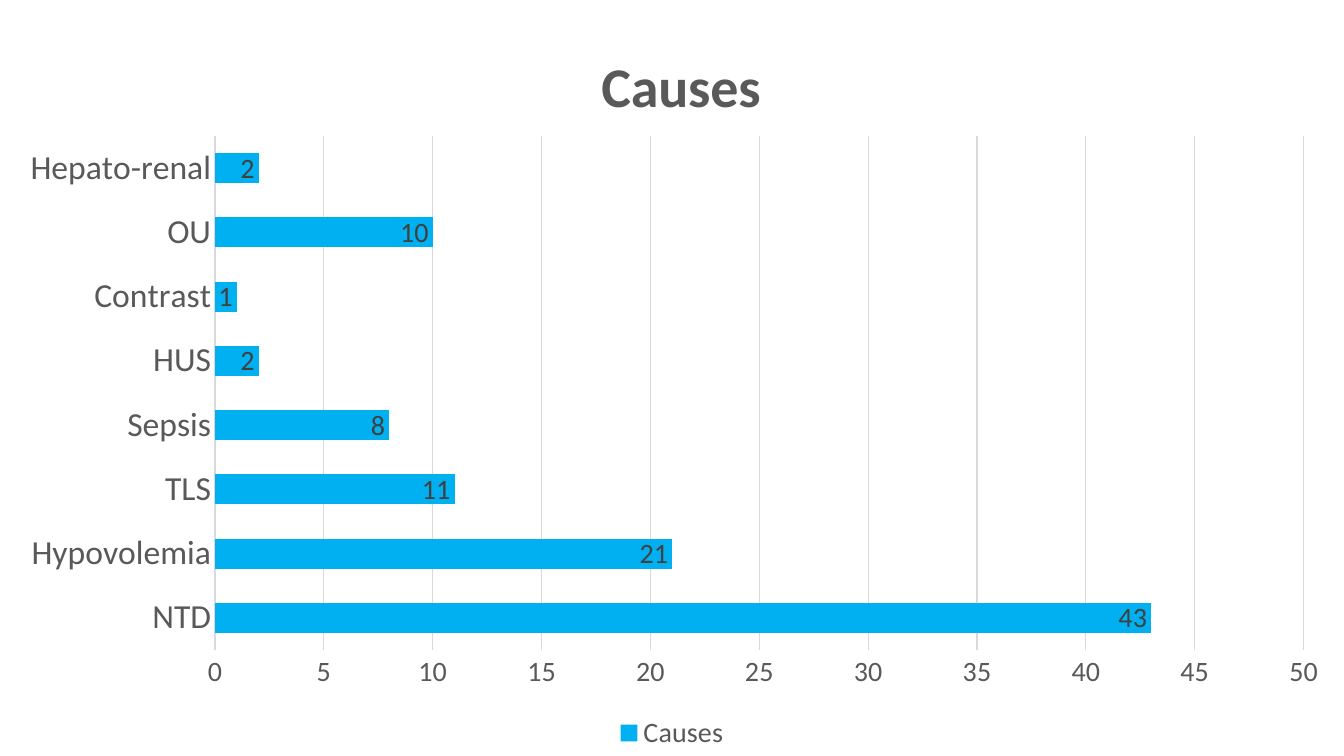
from dataclasses import dataclass

from lxml.etree import Element, SubElement
from pptx import Presentation
from pptx.chart.data import CategoryChartData
from pptx.dml.color import RGBColor
from pptx.enum.chart import (
    XL_CHART_TYPE,
    XL_LABEL_POSITION,
    XL_LEGEND_POSITION,
    XL_TICK_MARK,
)
from pptx.oxml.ns import qn
from pptx.text.text import Font
from pptx.util import Pt

WIDTH, HEIGHT = Pt(960), Pt(540)
COLORS = {"bar": "00B0F0", "text": "595959", "label": "404040", "line": "D9D9D9"}


@dataclass
class Style:
    size: float
    color: str = "text"
    bold: bool = False


@dataclass
class Cause:
    name: str
    count: int


CAUSES = [
    Cause("NTD", 43),
    Cause("Hypovolemia", 21),
    Cause("TLS", 11),
    Cause("Sepsis", 8),
    Cause("HUS", 2),
    Cause("Contrast", 1),
    Cause("OU", 10),
    Cause("Hepato-renal", 2),
]


def get_color(key: str) -> RGBColor:
    return RGBColor.from_string(COLORS[key])


def set_font(font: Font, style: Style) -> None:
    font.name = "Calibri"
    font.size = Pt(style.size)
    font.bold = style.bold
    font.color.rgb = get_color(style.color)


def set_line(line, width: float) -> None:
    line.color.rgb = get_color("line")
    line.width = Pt(width)


def place(parent, index: int, **parts: float) -> None:
    """Give a chart part a fixed place, in fractions of the chart."""
    for old in parent.findall(qn("c:layout")):
        parent.remove(old)
    layout = Element(qn("c:layout"))
    manual = SubElement(layout, qn("c:manualLayout"))
    if "w" in parts:
        SubElement(manual, qn("c:layoutTarget")).set("val", "inner")
    for mode in ("xMode", "yMode"):
        SubElement(manual, qn(f"c:{mode}")).set("val", "edge")
    for key, value in parts.items():
        SubElement(manual, qn(f"c:{key}")).set("val", str(value))
    parent.insert(index, layout)


def add_bars(slide):
    data = CategoryChartData()
    data.categories = [cause.name for cause in CAUSES]
    data.add_series("Causes", [cause.count for cause in CAUSES])
    frame = slide.shapes.add_chart(
        XL_CHART_TYPE.BAR_CLUSTERED, 0, 0, WIDTH, HEIGHT, data
    )
    chart = frame.chart
    set_font(chart.font, Style(10))

    plot = chart.plots[0]
    plot.gap_width = 115
    plot.overlap = -20
    plot.vary_by_categories = False
    bars = plot.series[0]
    bars.format.fill.solid()
    bars.format.fill.fore_color.rgb = get_color("bar")
    labels = bars.data_labels
    labels.show_value = True
    labels.position = XL_LABEL_POSITION.INSIDE_END
    set_font(labels.font, Style(20, "label"))
    return chart


def style_axes(chart) -> None:
    names, counts = chart.category_axis, chart.value_axis
    for axis, size in ((names, 24), (counts, 20)):
        axis.major_tick_mark = XL_TICK_MARK.NONE
        axis.minor_tick_mark = XL_TICK_MARK.NONE
        set_font(axis.tick_labels.font, Style(size))
    names.has_major_gridlines = False
    set_line(names.format.line, 1)
    counts.minimum_scale, counts.maximum_scale = 0, 50
    counts.major_unit = 5
    counts.has_major_gridlines = True
    set_line(counts.major_gridlines.format.line, 0.75)
    counts.format.line.fill.background()


def add_title(chart) -> None:
    chart.has_title = True
    title = chart.chart_title
    para = title.text_frame.paragraphs[0]
    para.text = "Causes"
    set_font(para.runs[0].font, Style(40, bold=True))
    title.include_in_layout = False
    place(title.element, 1, x=0.44, y=0.05)


def add_legend(chart) -> None:
    chart.has_legend = True
    chart.legend.position = XL_LEGEND_POSITION.BOTTOM
    chart.legend.include_in_layout = False
    set_font(chart.legend.font, Style(20))


def main() -> None:
    deck = Presentation()
    deck.slide_width, deck.slide_height = WIDTH, HEIGHT
    slide = deck.slides.add_slide(deck.slide_layouts[6])
    chart = add_bars(slide)
    style_axes(chart)
    add_title(chart)
    add_legend(chart)
    area = chart.element.find(f".//{qn('c:plotArea')}")
    place(area, 0, x=0.16, y=0.18, w=0.81, h=0.68)
    deck.save("out.pptx")


if __name__ == "__main__":
    main()
